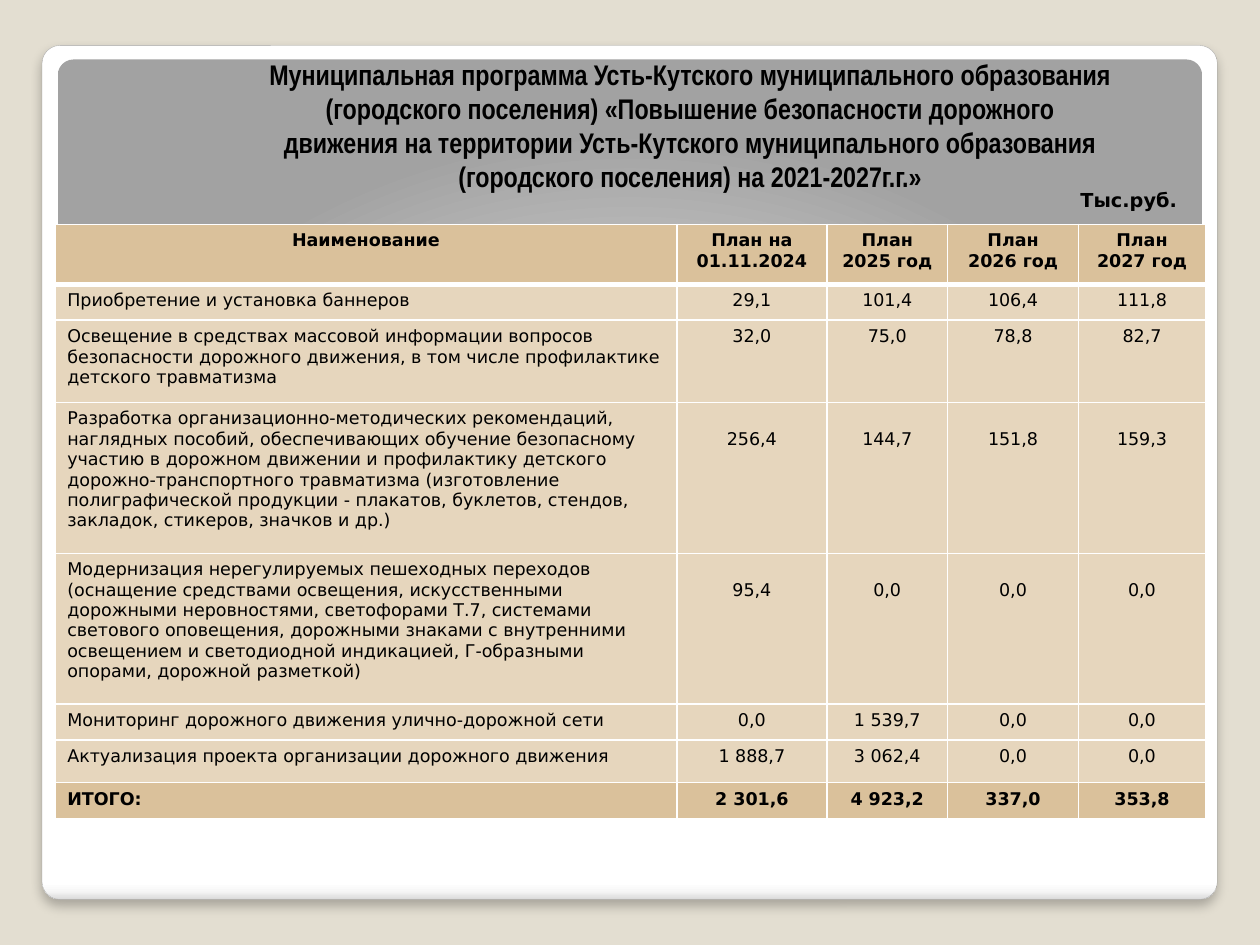
"""Build the road safety programme slide with its budget table."""
from copy import deepcopy

from pptx import Presentation
from pptx.dml.color import RGBColor as Color
from pptx.enum.shapes import MSO_SHAPE as Shape
from pptx.enum.text import MSO_ANCHOR as Anchor, PP_ALIGN as Align
from pptx.oxml import parse_xml
from pptx.oxml.ns import nsdecls, qn
from pptx.util import Pt

SAND = Color(0xE3, 0xDE, 0xD1)
TAN = Color(0xDA, 0xC1, 0x9B)
CREAM = Color(0xE6, 0xD6, 0xBD)
WHITE = Color(0xFF, 0xFF, 0xFF)
BLACK = Color(0x00, 0x00, 0x00)
PALE = Color(0xF7, 0xF7, 0xF7)
MIST = Color(0xE1, 0xE1, 0xE1)
SMOKE = Color(0xDA, 0xDA, 0xDA)
GREY = Color(0xA2, 0xA2, 0xA2)
EDGE = Color(0xA4, 0xA4, 0xA4)

SHEET = [(0, WHITE), (98, WHITE), (99, PALE), (100, SMOKE)]
GLOW = [(0, WHITE), (55, MIST), (100, GREY)]
DOWN = '<a:lin ang="5400000" scaled="0"/>'
ROUND = ('<a:path path="circle"><a:fillToRect l="50000" t="175000" '
         'r="50000" b="-75000"/></a:path>')
SHADE = (f'<a:effectLst {nsdecls("a")}><a:outerShdw blurRad="76200" dist="50800" '
         'dir="5400000" algn="tl" rotWithShape="0"><a:srgbClr val="000000">'
         '<a:alpha val="25000"/></a:srgbClr></a:outerShdw></a:effectLst>')

TITLE = (
    "Муниципальная программа Усть-Кутского муниципального образования "
    "(городского поселения) «Повышение безопасности дорожного\v"
    "движения на территории Усть-Кутского муниципального образования\v"
    "(городского поселения) на 2021-2027г.г.»"
)
WIDTHS = [355.5, 85.7, 69, 74.8, 72.6]
HEIGHTS = [34.2, 20.6, 47, 86.2, 86.2, 20.6, 24.4, 20.6]
ROWS = [
    ("Наименование", "План на 01.11.2024", "План 2025 год",
     "План 2026 год", "План 2027 год"),
    ("Приобретение и установка баннеров", "29,1", "101,4", "106,4", "111,8"),
    ("Освещение в средствах массовой информации вопросов безопасности "
     "дорожного движения, в том числе профилактике детского травматизма",
     "32,0", "75,0", "78,8", "82,7"),
    ("Разработка организационно-методических рекомендаций, наглядных пособий, "
     "обеспечивающих обучение безопасному участию в дорожном движении и "
     "профилактику детского дорожно-транспортного травматизма (изготовление "
     "полиграфической продукции - плакатов, буклетов, стендов, закладок, "
     "стикеров, значков и др.)", "256,4", "144,7", "151,8", "159,3"),
    ("Модернизация нерегулируемых пешеходных переходов (оснащение средствами "
     "освещения, искусственными дорожными неровностями, светофорами Т.7, "
     "системами светового оповещения, дорожными знаками с внутренними "
     "освещением и светодиодной индикацией, Г-образными опорами, дорожной "
     "разметкой)", "95,4", "0,0", "0,0", "0,0"),
    ("Мониторинг дорожного движения улично-дорожной сети",
     "0,0", "1 539,7", "0,0", "0,0"),
    ("Актуализация проекта организации дорожного движения",
     "1 888,7", "3 062,4", "0,0", "0,0"),
    ("ИТОГО:", "2 301,6", "4 923,2", "337,0", "353,8"),
]


def put(frame, text, size=10, font="DejaVu Sans", bold=True, align=Align.CENTER):
    """Write formatted text into a frame, line breaks included."""
    frame.word_wrap = True
    para = frame.paragraphs[0]
    para.text = text
    para.alignment = align
    for run in para.runs:
        run.font.size = Pt(size)
        run.font.name = font
        run.font.bold = bold
        run.font.color.rgb = BLACK
    for gap in para._p.findall(qn("a:br")):
        gap.append(deepcopy(para.runs[0]._r.rPr))


def add_box(slide, area, text, anchor, **style):
    """Add a text box."""
    frame = slide.shapes.add_textbox(*map(Pt, area)).text_frame
    frame.vertical_anchor = anchor
    put(frame, text, **style)


def add_panel(slide, area, stops, course, edge=None):
    """Add a rounded panel with a gradient; an edged one casts a shadow."""
    panel = slide.shapes.add_shape(Shape.ROUNDED_RECTANGLE, *map(Pt, area))
    panel.adjustments[0] = 0.021
    panel.shadow.inherit = False
    marks = "".join(f'<a:gs pos="{pos * 1000}"><a:srgbClr val="{tone}"/></a:gs>'
                    for pos, tone in stops)
    props = panel._element.spPr
    props.find(qn("a:prstGeom")).addnext(parse_xml(
        f'<a:gradFill {nsdecls("a")} rotWithShape="1"><a:gsLst>{marks}</a:gsLst>'
        f'{course}</a:gradFill>'))
    if edge is None:
        panel.line.fill.background()
        return
    panel.line.color.rgb = edge
    panel.line.width = Pt(0.16)
    props.replace(props.find(qn("a:effectLst")), parse_xml(SHADE))


def set_edges(cell, top, base):
    """Draw white borders, with the given top and bottom widths."""
    props = cell._tc.get_or_add_tcPr()
    for spot, (side, width) in enumerate(zip("LRTB", (1, 1, top, base))):
        props.insert(spot, parse_xml(
            f'<a:ln{side} {nsdecls("a")} w="{Pt(width)}"><a:solidFill>'
            f'<a:srgbClr val="{WHITE}"/></a:solidFill></a:ln{side}>'))


def add_budget(slide, left, top):
    """Add the budget table with a strong header and total row."""
    table = slide.shapes.add_table(
        len(ROWS), len(WIDTHS), Pt(left), Pt(top),
        Pt(sum(WIDTHS)), Pt(sum(HEIGHTS))).table
    for col, width in zip(table.columns, WIDTHS):
        col.width = Pt(width)
    for i, (values, height) in enumerate(zip(ROWS, HEIGHTS)):
        table.rows[i].height = Pt(height)
        strong = i in (0, len(ROWS) - 1)
        for j, value in enumerate(values):
            cell = table.cell(i, j)
            cell.fill.solid()
            cell.fill.fore_color.rgb = TAN if strong else CREAM
            set_edges(cell, 3 if i == 1 else 1, 3 if i == 0 else 1)
            if j and height > 80:
                cell.margin_top = Pt(15.3)
            put(cell.text_frame, value, bold=strong,
                align=Align.CENTER if i == 0 or j else Align.LEFT)


def main():
    """Compose and save the slide."""
    deck = Presentation()
    deck.slide_width, deck.slide_height = Pt(720), Pt(540)
    slide = deck.slides.add_slide(deck.slide_layouts[6])
    slide.background.fill.solid()
    slide.background.fill.fore_color.rgb = SAND
    add_panel(slide, (24, 26, 671.6, 488), SHEET, DOWN, EDGE)
    add_panel(slide, (33, 34, 654, 432), GLOW, ROUND)
    add_box(slide, (111, 31.8, 566.6, 82), TITLE, Anchor.BOTTOM,
            size=16.2, font="Arial Narrow")
    add_budget(slide, 31.3, 128.2)
    add_box(slide, (609, 105, 72, 18), "Тыс.руб.", Anchor.MIDDLE, size=11)
    deck.save("out.pptx")


if __name__ == "__main__":
    main()
